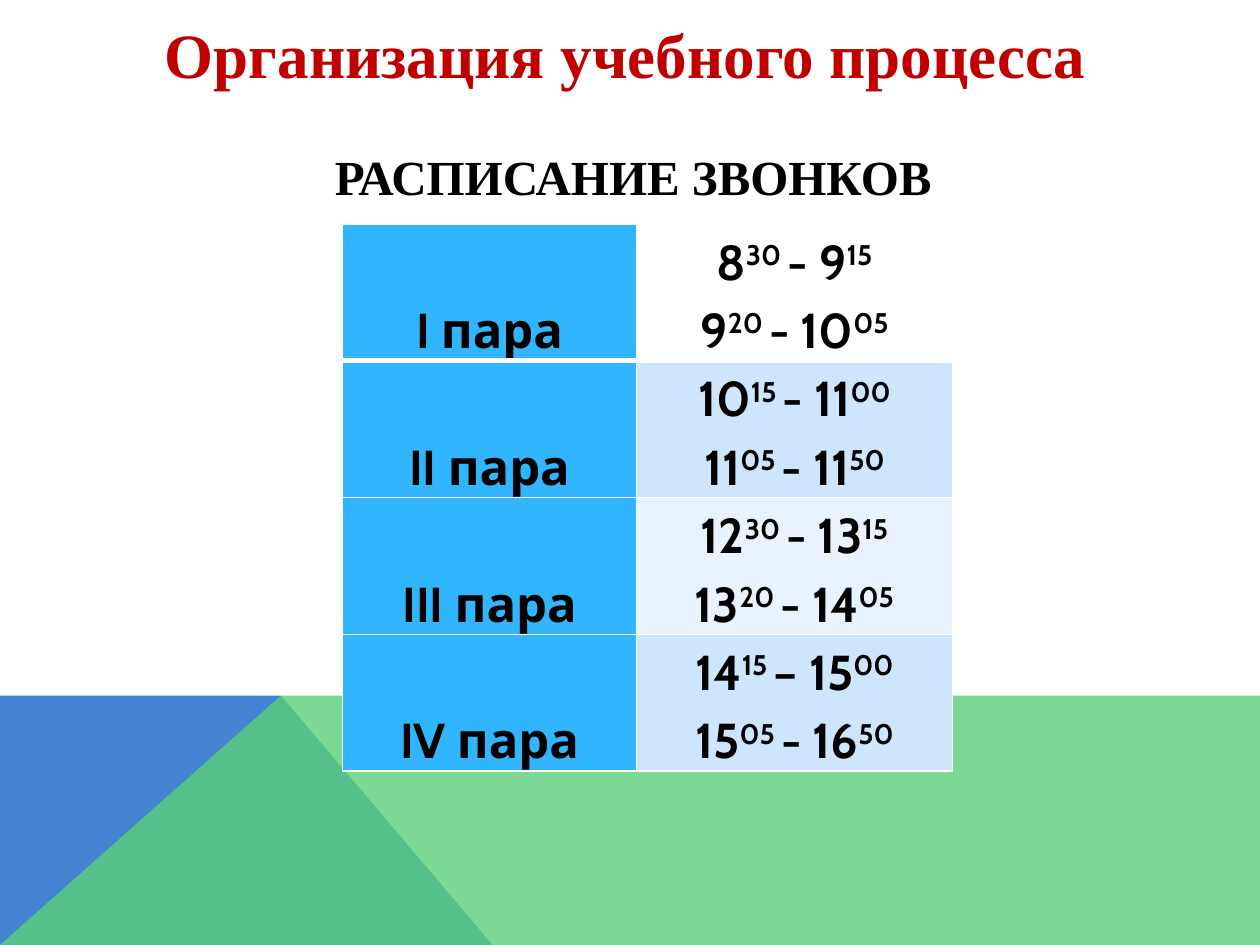
from dataclasses import dataclass

from lxml import etree
from pptx import Presentation
from pptx.dml.color import RGBColor
from pptx.enum.text import MSO_ANCHOR, MSO_AUTO_SIZE, PP_ALIGN
from pptx.oxml.ns import qn
from pptx.util import Inches, Pt

CENTER = PP_ALIGN.CENTER
MIDDLE = MSO_ANCHOR.MIDDLE
BOTTOM = MSO_ANCHOR.BOTTOM
NO_AUTOFIT = MSO_AUTO_SIZE.NONE

WIDTH, HEIGHT = Inches(10), Inches(7.5)
COLUMNS = (0.233, 0.251)
ROW = 0.144


@dataclass(frozen=True)
class Theme:
    heading: str = "C00000"
    text: str = "000000"
    border: str = "FFFFFF"
    label: str = "31B6FD"
    band_dark: str = "CEE5FE"
    band_light: str = "E8F3FF"
    blue: str = "4584D3"
    green: str = "5BD078"
    title_font: str = "Times New Roman"
    table_font: str = "Cabin"
    title_size: int = 36
    body_size: int = 28


THEME = Theme()

LESSONS = [
    ("I пара", None, [("8", "30", "- 9", "15"), ("9", "20", "- 10", "05")]),
    ("II пара", THEME.band_dark, [("10", "15", "- 11", "00"), ("11", "05", "- 11", "50")]),
    ("III пара", THEME.band_light, [("12", "30", "- 13", "15"), ("13", "20", "- 14", "05")]),
    ("IV пара", THEME.band_dark, [("14", "15", "– 15", "00"), ("15", "05", "- 16", "50")]),
]


def across(share):
    return round(WIDTH * share)


def down(share):
    return round(HEIGHT * share)


def style(paragraph, font_name, size, color):
    paragraph.alignment = CENTER
    font = paragraph.font
    font.name, font.size, font.bold = font_name, Pt(size), True
    font.color.rgb = RGBColor.from_string(color)


def add_panel(slide, corners, color, opacity=100):
    points = [(across(x), down(y)) for x, y in corners]
    outline = slide.shapes.build_freeform(*points[0], scale=1.0)
    outline.add_line_segments(points[1:], close=True)
    panel = outline.convert_to_shape()
    panel.shadow.inherit = False
    panel.line.fill.background()
    panel.fill.solid()
    panel.fill.fore_color.rgb = RGBColor.from_string(color)
    if opacity < 100:
        tint = panel.fill._xPr.find(".//" + qn("a:srgbClr"))
        etree.SubElement(tint, qn("a:alpha")).set("val", str(opacity * 1000))


def add_heading(slide, title, subtitle):
    box = slide.shapes.add_textbox(across(0.117), down(0.007), across(0.771), down(0.22))
    frame = box.text_frame
    frame.word_wrap = False
    frame.auto_size = NO_AUTOFIT
    frame.vertical_anchor = MIDDLE
    top = frame.paragraphs[0]
    top.text = title
    style(top, THEME.title_font, THEME.title_size, THEME.heading)
    below = frame.add_paragraph()
    below.text = subtitle
    below.space_before = Pt(32)
    style(below, THEME.title_font, THEME.body_size, THEME.text)


def set_borders(cell, bottom_width):
    properties = cell._tc.get_or_add_tcPr()
    for side, width in (("L", 1), ("R", 1), ("T", 1), ("B", bottom_width)):
        line = etree.SubElement(properties, qn(f"a:ln{side}"), w=str(Pt(width)))
        fill = etree.SubElement(line, qn("a:solidFill"))
        etree.SubElement(fill, qn("a:srgbClr"), val=THEME.border)


def format_cell(cell, color, bottom_width):
    set_borders(cell, bottom_width)
    cell.margin_left = cell.margin_right = Inches(0.07)
    cell.margin_top = cell.margin_bottom = 0
    cell.vertical_anchor = BOTTOM
    if color:
        cell.fill.solid()
        cell.fill.fore_color.rgb = RGBColor.from_string(color)
    else:
        cell.fill.background()
    for paragraph in cell.text_frame.paragraphs:
        paragraph.line_spacing = 1.15
        style(paragraph, THEME.table_font, THEME.body_size, THEME.text)


def add_time(paragraph, hour, minutes, end_hour, end_minutes):
    parts = ((hour, False), (minutes + " ", True), (end_hour, False), (end_minutes, True))
    for text, raised in parts:
        run = paragraph.add_run()
        run.text = text
        if raised:
            run._r.get_or_add_rPr().set("baseline", "30000")


def add_timetable(slide, lessons):
    table = slide.shapes.add_table(
        len(lessons), len(COLUMNS), across(0.272), down(0.237),
        across(sum(COLUMNS)), down(ROW * len(lessons)),
    ).table
    table.first_row = table.horz_banding = False
    for column, share in zip(table.columns, COLUMNS):
        column.width = across(share)
    for index, (name, band, times) in enumerate(lessons):
        label, hours = table.rows[index].cells
        bottom_width = 3 if index == 0 else 1
        label.text = name
        frame = hours.text_frame
        for number, time in enumerate(times):
            add_time(frame.add_paragraph() if number else frame.paragraphs[0], *time)
        format_cell(label, THEME.label, bottom_width)
        format_cell(hours, band, bottom_width)


def main():
    deck = Presentation()
    deck.slide_width, deck.slide_height = WIDTH, HEIGHT
    slide = deck.slides.add_slide(deck.slide_layouts[6])
    horizon, peak = 0.736, 0.223
    add_panel(slide, [(0, 1), (0, horizon), (peak, horizon), (0.391, 1)], THEME.blue)
    add_panel(slide, [(0, 1), (peak, horizon), (1, horizon), (1, 1)], THEME.green, 80)
    add_timetable(slide, LESSONS)
    add_heading(slide, "Организация учебного процесса ", "РАСПИСАНИЕ ЗВОНКОВ")
    deck.save("out.pptx")


if __name__ == "__main__":
    main()
